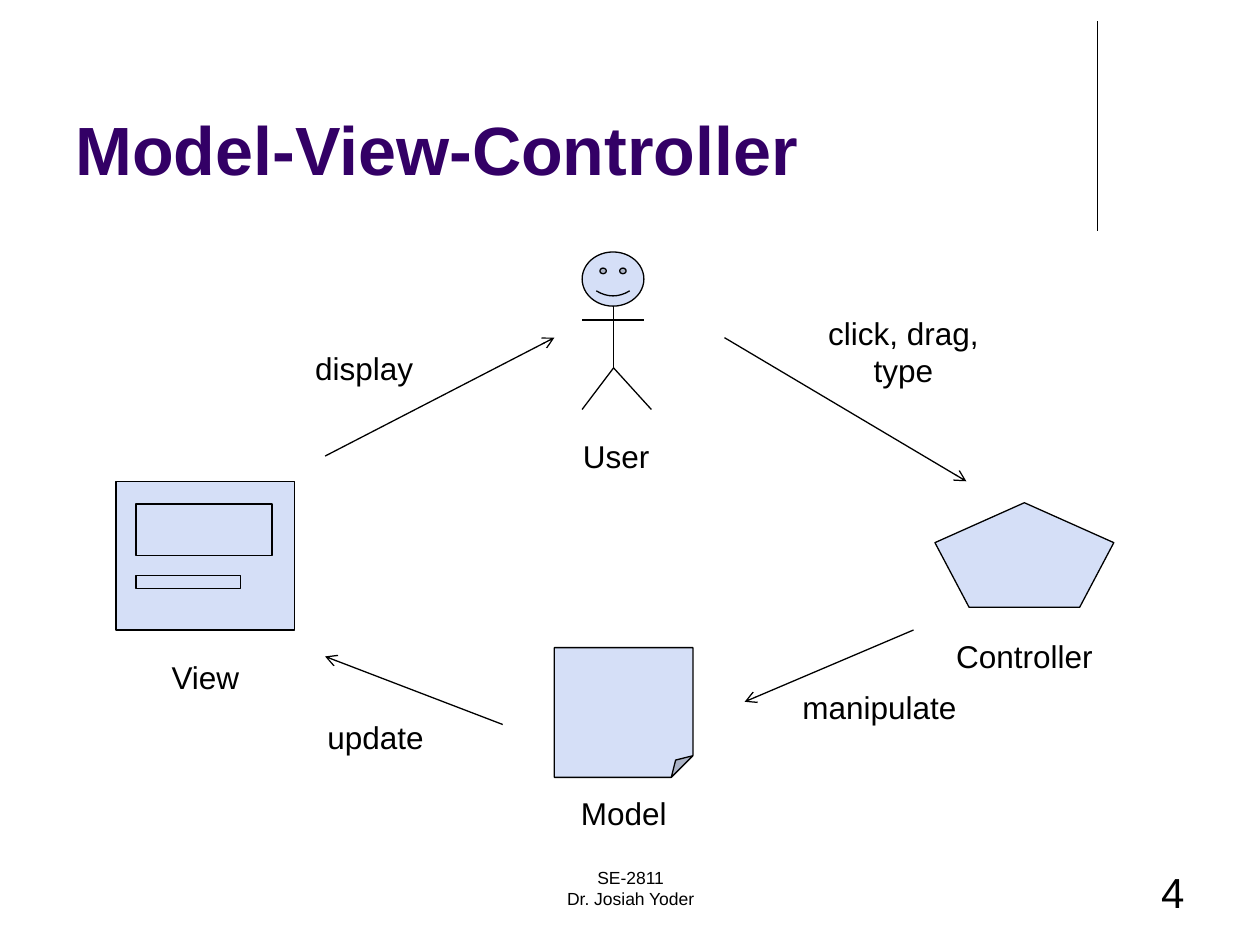
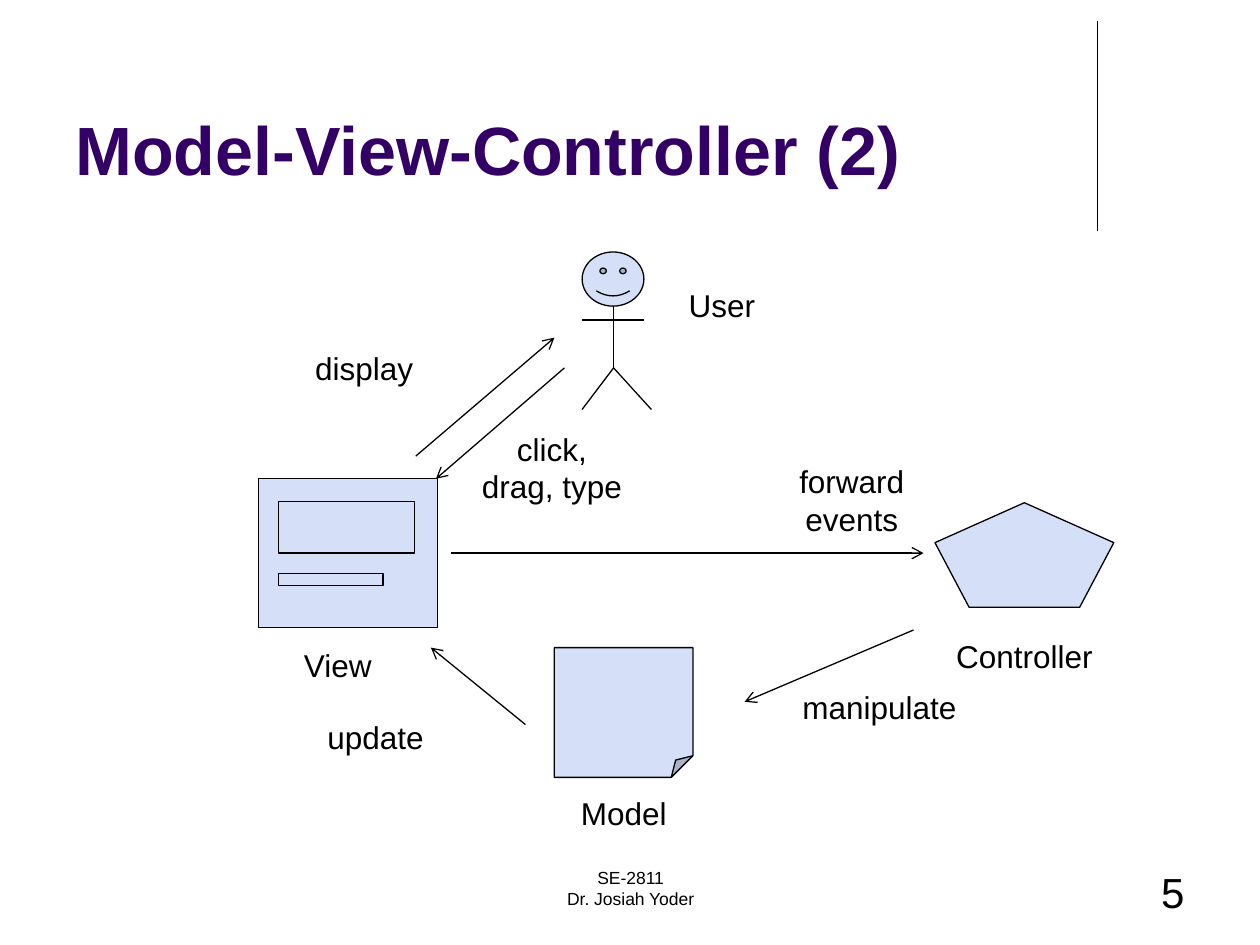
from lxml import etree
from pptx import Presentation
from pptx.dml.color import RGBColor
from pptx.enum.shapes import MSO_CONNECTOR, MSO_SHAPE
from pptx.enum.text import MSO_ANCHOR, PP_ALIGN
from pptx.oxml.ns import qn
from pptx.util import Inches, Pt

COLORS = {"title": "330066", "ink": "000000", "fill": "D5DFF7"}
FONT = "Arial"
LINE_WIDTH = Pt(0.75)
LABEL_HEIGHT = 0.4
TALL_LABEL_HEIGHT = 0.71
NAME_WIDTH = 1.92
ACTION_WIDTH = 1.68


def color(name):
    return RGBColor.from_string(COLORS[name])


class DiagramDeck:
    def __init__(self):
        self.presentation = Presentation()
        self.presentation.slide_width = Inches(10)
        self.presentation.slide_height = Inches(7.5)
        self.slide = None

    def add_slide(self, title, number):
        layout = self.presentation.slide_layouts[6]
        self.slide = self.presentation.slides.add_slide(layout)
        self.line((8.71, 0.17), (8.71, 1.83))
        self.text([title], 0.5, 0.13, 8.25, 1.42, size=39, ink="title",
                  bold=True, align=PP_ALIGN.LEFT, anchor=MSO_ANCHOR.BOTTOM)
        self.text(["SE-2811", "Dr. Josiah Yoder"], 3.42, 6.83, 3.17, 0.5, size=10)
        self.text([str(number)], 7.17, 6.83, 2.33, 0.5, size=24, align=PP_ALIGN.RIGHT)

    def text(self, lines, left, top, width, height, size=18, ink="ink",
             bold=False, align=PP_ALIGN.CENTER, anchor=MSO_ANCHOR.TOP):
        box = self.slide.shapes.add_textbox(
            Inches(left), Inches(top), Inches(width), Inches(height))
        frame = box.text_frame
        frame.word_wrap = True
        frame.vertical_anchor = anchor
        frame.text = "\n".join(lines)
        for paragraph in frame.paragraphs:
            paragraph.alignment = align
            paragraph.font.name = FONT
            paragraph.font.size = Pt(size)
            paragraph.font.bold = bold
            paragraph.font.color.rgb = color(ink)

    def label(self, text, left, top, width, height=LABEL_HEIGHT):
        self.text([text], left, top, width, height)

    def shape(self, kind, left, top, width, height, group=None):
        shapes = (group or self.slide).shapes
        shape = shapes.add_shape(
            kind, Inches(left), Inches(top), Inches(width), Inches(height))
        shape.shadow.inherit = False
        shape.fill.solid()
        shape.fill.fore_color.rgb = color("fill")
        shape.line.color.rgb = color("ink")
        shape.line.width = LINE_WIDTH

    def line(self, start, end, group=None):
        shapes = (group or self.slide).shapes
        connector = shapes.add_connector(
            MSO_CONNECTOR.STRAIGHT, *(Inches(value) for value in (*start, *end)))
        connector.line.color.rgb = color("ink")
        connector.line.width = LINE_WIDTH
        etree.SubElement(connector.element.spPr, qn("a:effectLst"))
        return connector

    def arrow(self, start, end):
        connector = self.line(start, end)
        outline = connector.element.spPr.find(qn("a:ln"))
        etree.SubElement(outline, qn("a:tailEnd"), type="arrow")

    def user(self):
        group = self.slide.shapes.add_group_shape()
        self.shape(MSO_SHAPE.SMILEY_FACE, 4.62, 2, 0.49, 0.43, group)
        neck, hip = (4.87, 2.43), (4.87, 2.92)
        self.line(neck, hip, group)
        for foot in (4.62, 5.17):
            self.line(hip, (foot, 3.25), group)
        self.line((4.62, 2.54), (5.11, 2.54), group)

    def view(self, left, top):
        group = self.slide.shapes.add_group_shape()
        for dx, dy, width, height in (
                (0, 0, 1.42, 1.18), (0.16, 0.18, 1.08, 0.41), (0.16, 0.75, 0.83, 0.1)):
            self.shape(MSO_SHAPE.RECTANGLE, left + dx, top + dy, width, height, group)

    def shared_parts(self):
        self.user()
        self.shape(MSO_SHAPE.REGULAR_PENTAGON, 7.42, 3.99, 1.42, 0.83)
        self.label("Controller", 7.17, 5.01, NAME_WIDTH)
        self.shape(MSO_SHAPE.FOLDED_CORNER, 4.4, 5.14, 1.1, 1.03)
        self.label("Model", 3.99, 6.25, NAME_WIDTH)
        self.arrow((7.25, 5), (5.91, 5.57))
        self.label("manipulate", 6.14, 5.41, ACTION_WIDTH)
        self.label("update", 2.14, 5.65, ACTION_WIDTH)
        self.label("display", 2.05, 2.72, ACTION_WIDTH)


def main():
    deck = DiagramDeck()

    deck.add_slide("Model-View-Controller", 4)
    deck.shared_parts()
    deck.label("User", 3.64, 3.42, 2.5)
    deck.view(0.92, 3.82)
    deck.label("View", 0.67, 5.17, NAME_WIDTH)
    deck.arrow((5.75, 2.68), (7.67, 3.82))
    deck.arrow((3.99, 5.75), (2.58, 5.21))
    deck.arrow((2.58, 3.62), (4.4, 2.68))
    deck.label("click, drag, type", 6.46, 2.44, 1.42, TALL_LABEL_HEIGHT)

    deck.add_slide("Model-View-Controller (2)", 5)
    deck.shared_parts()
    deck.label("User", 4.48, 2.22, 2.5)
    deck.view(2.05, 3.8)
    deck.label("View", 1.72, 5.08, NAME_WIDTH)
    deck.arrow((4.48, 2.92), (3.46, 3.8))
    deck.arrow((4.17, 5.75), (3.42, 5.14))
    deck.arrow((3.3, 3.62), (4.4, 2.68))
    deck.arrow((3.58, 4.39), (7.33, 4.39))
    deck.label("click, drag, type", 3.72, 3.36, 1.32, TALL_LABEL_HEIGHT)
    deck.label("forward events", 6.1, 3.62, 1.32, TALL_LABEL_HEIGHT)

    deck.presentation.save("out.pptx")


if __name__ == "__main__":
    main()
